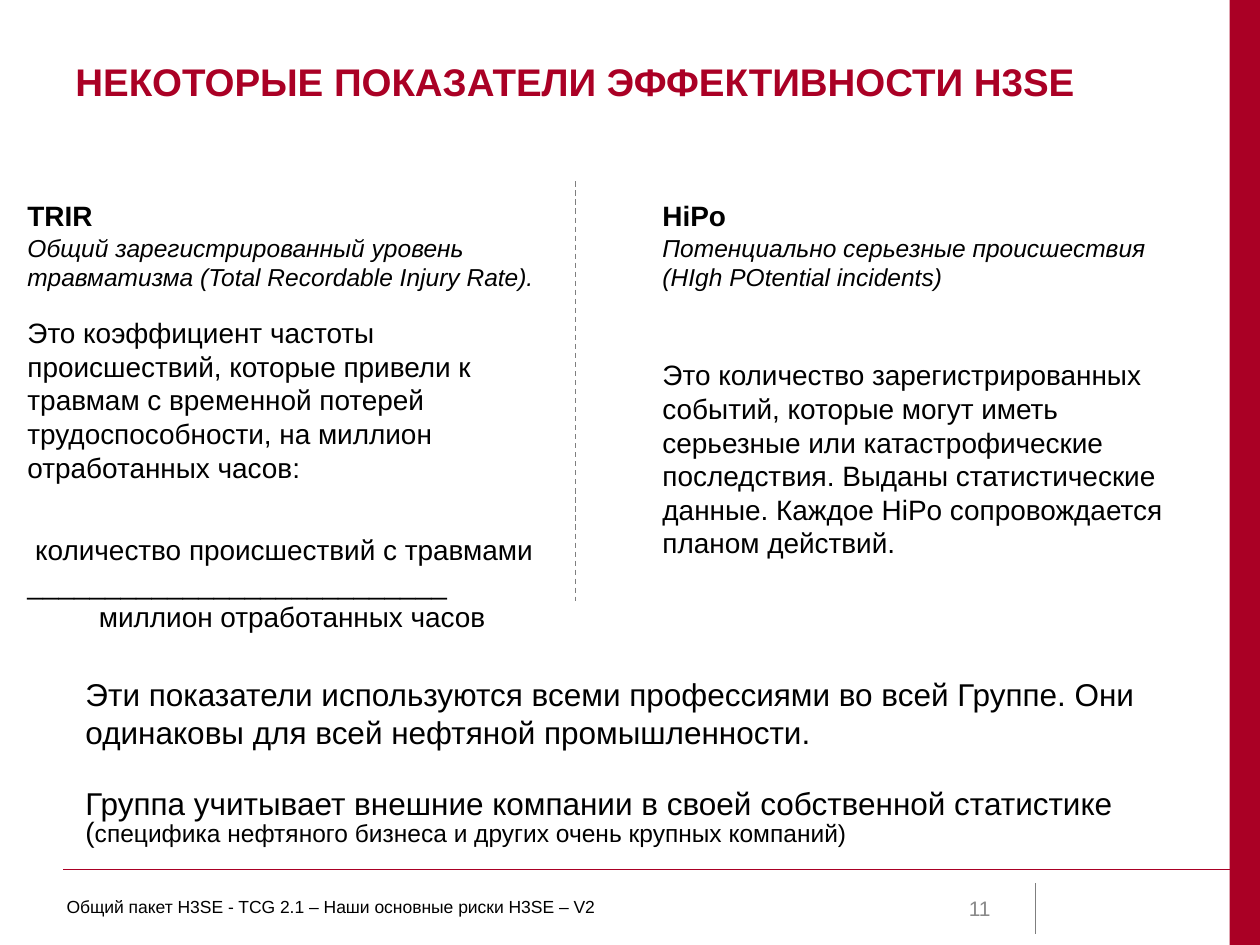
from dataclasses import dataclass

from pptx import Presentation, util as u
from pptx.dml.color import RGBColor
from pptx.enum import dml, shapes, text
from pptx.oxml.ns import qn
from lxml import etree


@dataclass(frozen=True)
class Theme:
    font: str = "Arial"
    accent: str = "AA0025"
    ink: str = "000000"
    paper: str = "FFFFFF"
    muted: str = "898989"
    rule: str = "7F7F7F"
    title: int = 22
    lead: int = 18
    body: int = 16
    detail: int = 14
    number: int = 12
    footer: int = 10


def paragraph(*runs, **format_values):
    """Runs are (text, font values); format values belong to the paragraph."""
    return runs, format_values


class SlideBuilder:
    """Places elements on a grid of 100 columns and 75 rows."""

    COLUMNS, ROWS = 100, 75

    def __init__(self, deck, theme):
        self.theme = theme
        self.slide = deck.slides.add_slide(deck.slide_layouts[6])
        self.column = deck.slide_width / self.COLUMNS
        self.row = deck.slide_height / self.ROWS

    def place(self, across, down, *size):
        spans = (across, down, *size)
        units = (self.column, self.row) * 2
        return [u.Emu(round(span * unit)) for span, unit in zip(spans, units)]

    def band(self, *area):
        band = self.slide.shapes.add_shape(shapes.MSO_SHAPE.RECTANGLE, *self.place(*area))
        band.shadow.inherit = False
        band.fill.solid()
        band.fill.fore_color.rgb = RGBColor.from_string(self.theme.accent)
        band.line.fill.background()

    def rule(self, start, end, color, width=0.75, dash=None):
        rule = self.slide.shapes.add_connector(
            shapes.MSO_CONNECTOR.STRAIGHT, *self.place(*start), *self.place(*end))
        rule.line.color.rgb = RGBColor.from_string(color)
        rule.line.width = u.Pt(width)
        rule.line.dash_style = dash
        etree.SubElement(rule._element.spPr, qn("a:effectLst"))

    def text_block(self, area, *paragraphs, fill=None, anchor=text.MSO_ANCHOR.TOP):
        box = self.slide.shapes.add_textbox(*self.place(*area))
        if fill:
            box.fill.solid()
            box.fill.fore_color.rgb = RGBColor.from_string(fill)
        frame = box.text_frame
        frame.word_wrap = True
        frame.vertical_anchor = anchor
        for index, (runs, format_values) in enumerate(paragraphs):
            line = frame.paragraphs[0] if index == 0 else frame.add_paragraph()
            for name, value in format_values.items():
                setattr(line, name, value)
            for words, font_values in runs:
                self.text_run(line, words, **font_values)

    def text_run(self, line, words, size, color=None, **font_values):
        run = line.add_run()
        run.text = words
        values = {"name": self.theme.font, "size": u.Pt(size), **font_values}
        for name, value in values.items():
            setattr(run.font, name, value)
        run.font.color.rgb = RGBColor.from_string(color or self.theme.ink)

    def indicator(self, area, name, meaning, *explanation, fill=None):
        self.text_block(
            area,
            paragraph((name, {"size": self.theme.body, "bold": True})),
            paragraph((meaning, {"size": self.theme.detail, "italic": True})),
            *explanation, fill=fill)


def main():
    theme = Theme()
    deck = Presentation()
    deck.slide_width, deck.slide_height = u.Inches(10), u.Inches(7.5)
    page = SlideBuilder(deck, theme)
    body, lead = {"size": theme.body}, {"size": theme.lead}
    middle = text.MSO_ANCHOR.MIDDLE

    # Page frame
    page.band(97.6, 0, 2.4, 75)
    page.rule((5, 69), (100, 69), theme.accent)
    page.rule((82.2, 70.1), (82.2, 74.1), theme.rule)

    # Title
    page.text_block((5, 3, 89.9, 6.9), paragraph(
        ("НЕКОТОРЫЕ ПОКАЗАТЕЛИ ЭФФЕКТИВНОСТИ H3SE",
         {"size": theme.title, "color": theme.accent, "bold": True})), anchor=middle)

    # Two indicators and the divider between them
    page.indicator(
        (1.2, 15.3, 44, 40.6), "TRIR",
        "Общий зарегистрированный уровень травматизма (Total Recordable Injury Rate).",
        paragraph(("Это коэффициент частоты происшествий, которые привели к травмам "
                   "с временной потерей трудоспособности, на миллион отработанных часов:",
                   body), space_before=u.Pt(14)),
        paragraph((" количество происшествий с травмами " + "_" * 27, body),
                  space_before=u.Pt(28)),
        paragraph(("миллион отработанных часов", body),
                  alignment=text.PP_ALIGN.CENTER))
    page.indicator(
        (51.6, 15.3, 43.3, 30.5), "HiPo",
        "Потенциально серьезные происшествия (HIgh POtential incidents)",
        paragraph(("Это количество зарегистрированных событий, которые могут иметь "
                   "серьезные или катастрофические последствия. Выданы статистические "
                   "данные. Каждое HiPo сопровождается планом действий.", body),
                  space_before=u.Pt(38)),
        fill=theme.paper)
    page.rule((45.7, 14.4), (45.7, 47.7), theme.rule, dash=dml.MSO_LINE.DASH)

    # Conclusions
    page.text_block(
        (5.8, 53.1, 88.2, 17.9),
        paragraph(("Эти показатели используются всеми профессиями во всей Группе. "
                   "Они одинаковы для всей нефтяной промышленности.", lead)),
        paragraph(("Группа учитывает внешние компании в своей собственной статистике", lead),
                  (" (", body),
                  ("специфика нефтяного бизнеса и других очень крупных компаний)",
                   {"size": theme.detail}),
                  line_spacing=0.8, space_before=u.Pt(23)))

    # Footer and page number
    page.text_block((4.3, 70.6, 72.6, 4), paragraph(
        ("Общий пакет H3SE - TCG 2.1 – Наши основные риски H3SE – V2",
         {"size": theme.footer})))
    page.text_block((71.7, 70.1, 7.9, 4), paragraph(
        ("11", {"size": theme.number, "color": theme.muted}),
        alignment=text.PP_ALIGN.RIGHT), anchor=middle)

    deck.save("out.pptx")


if __name__ == "__main__":
    main()
